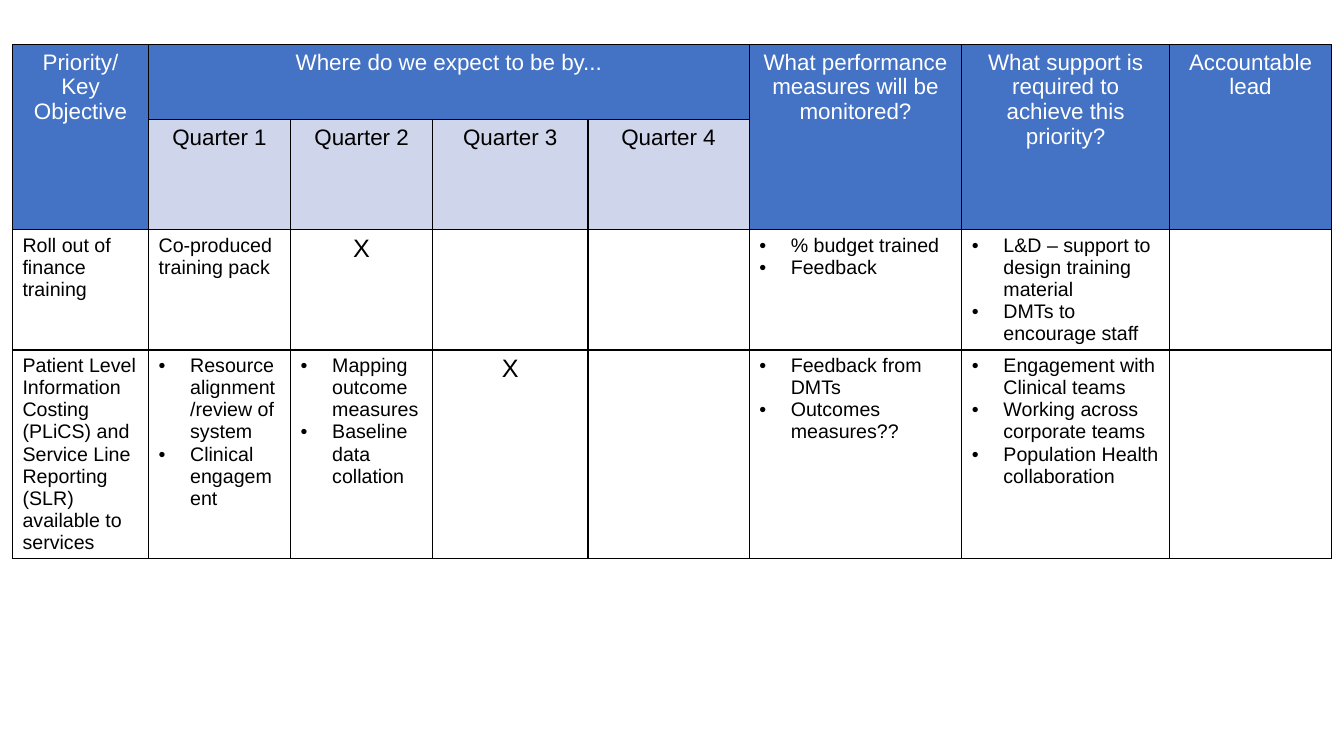
import pptx
import pptx.util
import pptx.dml.color
import pptx.enum.text
import pptx.oxml
import pptx.oxml.ns

Pt = pptx.util.Pt
RGB = pptx.dml.color.RGBColor.from_string
CENTER = pptx.enum.text.PP_ALIGN.CENTER

COLORS = {"header": "4472C4", "quarter": "CFD5EA", "white": "FFFFFF", "black": "000000"}
COLUMN_WIDTHS = [97.2, 101.5, 101.5, 110.9, 115.2, 151.9, 148.3, 115.9]
ROW_HEIGHTS = [53.6, 78.6, 85.7, 148.6]

# style: font size, text colour, fill, centred, bulleted
STYLES = {
    "header": (16, "white", "header", True, False),
    "quarter": (16, "black", "quarter", True, False),
    "plain": (14, "black", None, False, False),
    "mark": (18, "black", None, True, False),
    "list": (14, "black", None, False, True),
}

HEADINGS = {
    0: "Priority/\nKey Objective",
    1: "Where do we expect to be by...",
    5: "What performance measures will be monitored?",
    6: "What support is required to achieve this priority?",
    7: "Accountable lead",
}
CONTENT = {(0, column): ("header", text) for column, text in HEADINGS.items()}
CONTENT.update({(1, number): ("quarter", f"Quarter {number}") for number in range(1, 5)})
CONTENT.update({
    (2, 0): ("plain", "Roll out of finance training"),
    (2, 1): ("plain", "Co-produced training pack"),
    (2, 2): ("mark", "X"),
    (2, 5): ("list", "% budget trained\nFeedback"),
    (2, 6): ("list", "L&D – support to design training material\nDMTs to encourage staff"),
    (3, 0): ("plain", "Patient Level Information Costing (PLiCS) and Service Line "
                      "Reporting (SLR) available to services"),
    (3, 1): ("list", "Resource alignment/review of system\nClinical engagement"),
    (3, 2): ("list", "Mapping outcome measures\nBaseline data collation"),
    (3, 3): ("mark", "X"),
    (3, 5): ("list", "Feedback from DMTs\nOutcomes measures??"),
    (3, 6): ("list", "Engagement with Clinical teams\nWorking across corporate teams\n"
                     "Population Health collaboration"),
})


def add_borders(cell):
    properties = cell._tc.get_or_add_tcPr()
    for side in ("lnL", "lnR", "lnT", "lnB"):
        properties.append(pptx.oxml.parse_xml(
            f'<a:{side} {pptx.oxml.ns.nsdecls("a")} w="{Pt(1)}"><a:solidFill>'
            f'<a:srgbClr val="{COLORS["black"]}"/></a:solidFill></a:{side}>'))


def add_bullet(para):
    properties = para._p.get_or_add_pPr()
    properties.set("marL", str(Pt(22.5)))
    properties.set("indent", str(Pt(-22.5)))
    for element in ('buFont {} typeface="Arial"', 'buChar {} char="•"'):
        properties.append(pptx.oxml.parse_xml(
            f'<a:{element.format(pptx.oxml.ns.nsdecls("a"))}/>'))


deck = pptx.Presentation()
deck.slide_width, deck.slide_height = Pt(960), Pt(540)
page = deck.slides.add_slide(deck.slide_layouts[6])

table = page.shapes.add_table(
    len(ROW_HEIGHTS), len(COLUMN_WIDTHS), Pt(8.9), Pt(32),
    Pt(sum(COLUMN_WIDTHS)), Pt(sum(ROW_HEIGHTS))).table
table.first_row = False
table.horz_banding = False
for column, width in zip(table.columns, COLUMN_WIDTHS):
    column.width = Pt(width)
for row, height in zip(table.rows, ROW_HEIGHTS):
    row.height = Pt(height)

for row in range(len(ROW_HEIGHTS)):
    for column in range(len(COLUMN_WIDTHS)):
        cell = table.cell(row, column)
        default = "header" if row < 2 else "plain"
        style, text = CONTENT.get((row, column), (default, ""))
        size, color, fill, centred, bulleted = STYLES[style]
        add_borders(cell)
        if fill:
            cell.fill.solid()
            cell.fill.fore_color.rgb = RGB(COLORS[fill])
        else:
            cell.fill.background()
        cell.text = text
        for para in cell.text_frame.paragraphs:
            if centred:
                para.alignment = CENTER
            if bulleted:
                add_bullet(para)
            para.font.name = "Arial"
            para.font.size = Pt(size)
            para.font.color.rgb = RGB(COLORS[color])

table.cell(0, 1).merge(table.cell(0, 4))
for column in (0, 5, 6, 7):
    table.cell(0, column).merge(table.cell(1, column))

deck.save("out.pptx")
